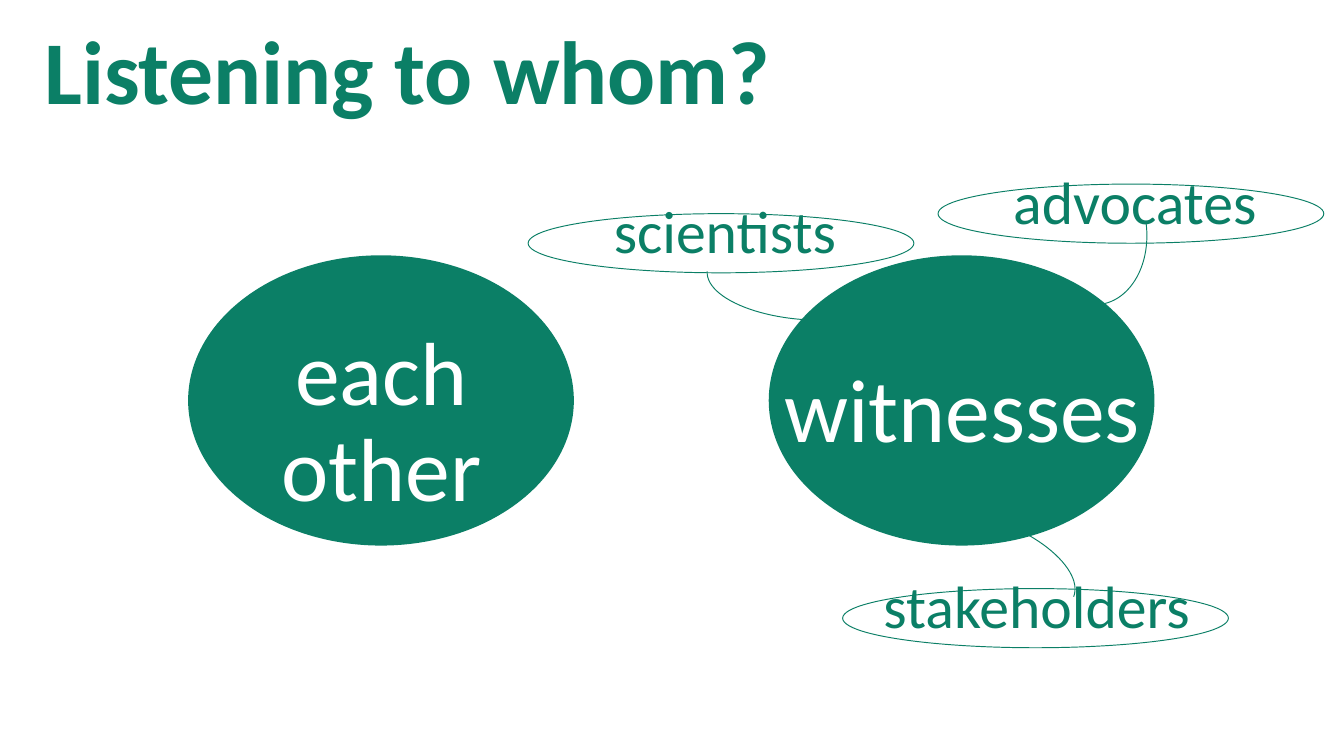
from pptx import Presentation
from pptx.dml.color import RGBColor
from pptx.enum.shapes import MSO_SHAPE as SHAPE
from pptx.enum.text import MSO_ANCHOR as ANCHOR, MSO_AUTO_SIZE as AUTO, PP_ALIGN as ALIGN
from pptx.util import Inches, Pt

GREEN = RGBColor(0x0B, 0x7F, 0x66)
WHITE = RGBColor(0xFF, 0xFF, 0xFF)

# Content: boxes are left, top, width, height in inches
TITLE = "Listening to whom?"
GROUP_SIZE = (2.87, 2.16)
GROUP_TOP = 1.9
GROUPS = [  # ellipse left, label, label box
    (1.4, "each other", (1.79, 2.39, 2.1, 1.57)),
    (5.72, "witnesses", (5.69, 2.67, 2.94, 0.84)),
]
WITNESS_SIZE = (2.87, 0.44)
LABEL_SIZE = (2.87, 0.59)
WITNESSES = [  # label, label corner, ellipse corner, arc box, arc rotation
    ("scientists", (3.96, 1.45), (3.93, 1.59), (5.7, 1.31, 0.63, 1.51), 273.4),
    ("stakeholders", (6.28, 4.24), (6.27, 4.38), (7.01, 3.49, 0.65, 1.4), 110.9),
    ("advocates", (7.01, 1.24), (6.98, 1.37), (7.69, 1.14, 0.84, 1.13), 171.8),
]

# A 16:9 slide
prs = Presentation()
prs.slide_width = Inches(10)
prs.slide_height = prs.slide_width * 9 // 16
s = prs.slides.add_slide(prs.slide_layouts[5])


def write(sp, text, size=48, color=GREEN, bold=False, align=ALIGN.CENTER):
    tf = sp.text_frame
    tf.word_wrap = True
    tf.auto_size = AUTO.SHAPE_TO_FIT_TEXT
    tf.vertical_anchor = ANCHOR.TOP
    p = tf.paragraphs[0]
    p.alignment, p.line_spacing = align, 0.9
    r = p.add_run()
    r.text = text
    r.font.name, r.font.size, r.font.bold = "Calibri", Pt(size), bold
    r.font.color.rgb = color


def add_label(box, text, **style):
    write(s.shapes.add_textbox(*map(Inches, box)), text, **style)


def add_shape(kind, box, fill=None):
    sp = s.shapes.add_shape(kind, *map(Inches, box))
    sp.shadow.inherit = False
    if fill is None:
        sp.fill.background()
        sp.line.color.rgb = GREEN
        sp.line.width = Pt(0.5)
    else:
        sp.fill.solid()
        sp.fill.fore_color.rgb = fill
        sp.line.fill.background()
    return sp


# Title
title = s.shapes.title
title.left, title.top, title.width, title.height = map(Inches, (0.23, 0.15, 9.47, 0.84))
write(title, TITLE, bold=True, align=ALIGN.LEFT)

# Main groups
for left, text, box in GROUPS:
    add_shape(SHAPE.OVAL, (left, GROUP_TOP, *GROUP_SIZE), fill=GREEN)
    add_label(box, text, color=WHITE)

# Kinds of witnesses, each tied to its group by a mirrored arc
for text, label_at, oval_at, arc_box, angle in WITNESSES:
    add_label((*label_at, *LABEL_SIZE), text, size=32)
    add_shape(SHAPE.OVAL, (*oval_at, *WITNESS_SIZE))
    arc = add_shape(SHAPE.ARC, arc_box)
    arc.rotation = angle
    arc._element.spPr.find("{*}xfrm").set("flipH", "1")

prs.save("out.pptx")
